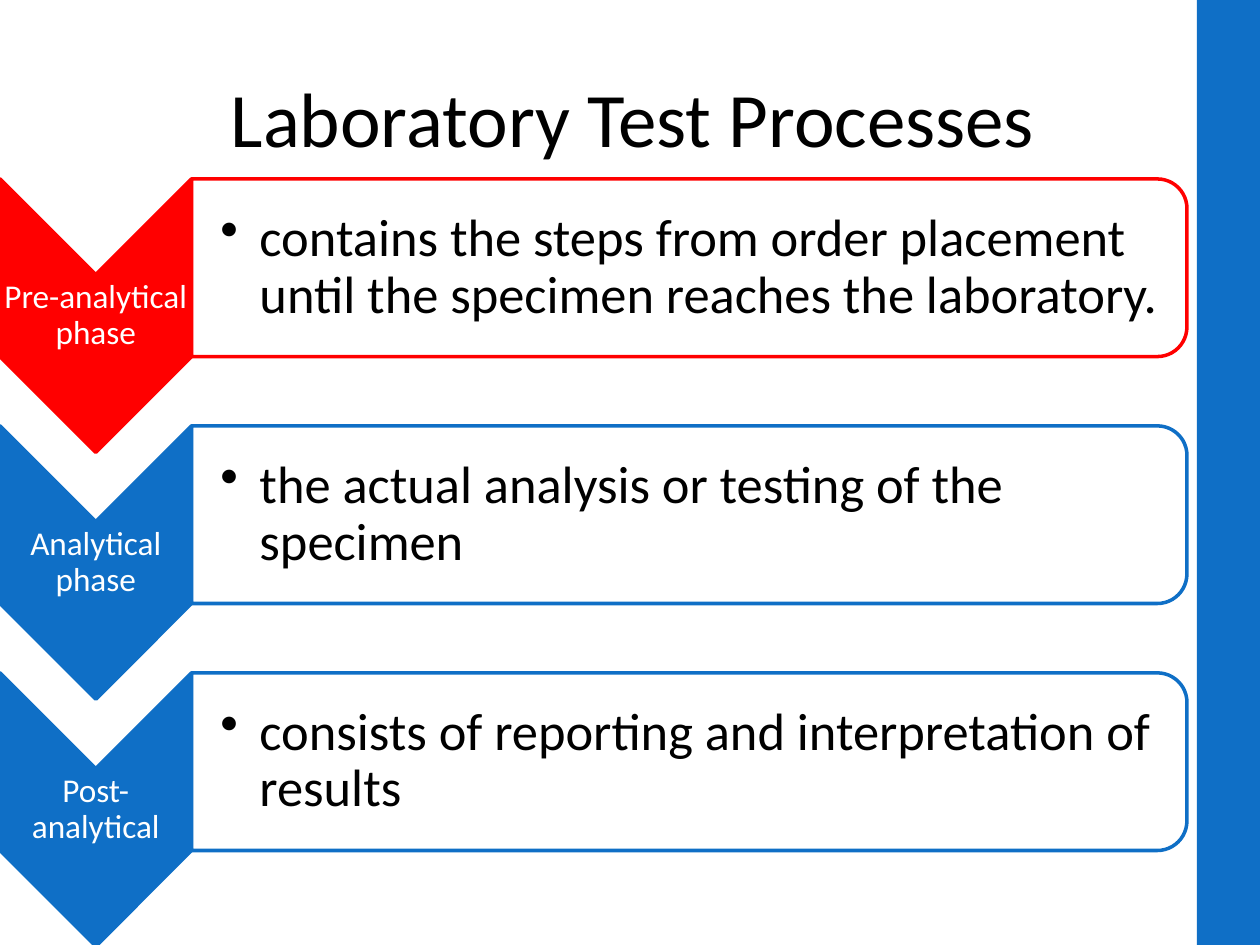
from lxml.etree import SubElement
from pptx import Presentation
from pptx.dml.color import RGBColor
from pptx.enum.shapes import MSO_SHAPE
from pptx.enum.text import MSO_ANCHOR, PP_ALIGN
from pptx.oxml.ns import qn
from pptx.util import Inches, Pt

WHITE = RGBColor(255, 255, 255)
BLACK = RGBColor(0, 0, 0)
RED = RGBColor(255, 0, 0)
BLUE = RGBColor(0x0F, 0x6F, 0xC6)

deck = Presentation()
deck.slide_width, deck.slide_height = Inches(10), Inches(7.5)
page = deck.slides.add_slide(deck.slide_layouts[6])

# Grid in inches: a phase column, a description column and three equal rows
PHASE_WIDTH, BODY_WIDTH = 1.52, 7.9
CHEVRON_HEIGHT, BODY_HEIGHT = 2.17, 1.41
FIRST_ROW, ROW_STEP = 1.42, 1.96


def add_turned(kind, left, top, width, height, color):
    """Add a shape turned by 90 degrees that covers the given area once turned."""
    shape = page.shapes.add_shape(
        kind, Inches(left + (width - height) / 2), Inches(top + (height - width) / 2),
        Inches(height), Inches(width))
    shape.rotation = 90
    shape.shadow.inherit = False
    shape.line.color.rgb = color
    shape.line.width = Pt(2)
    shape.fill.solid()
    return shape


def add_text(words, left, top, width, height, size, color, margins, spacing=1.0, bullet=False):
    box = page.shapes.add_textbox(Inches(left), Inches(top), Inches(width), Inches(height))
    frame = box.text_frame
    frame.word_wrap = True
    frame.vertical_anchor = MSO_ANCHOR.MIDDLE
    frame.margin_left = Inches(margins[0])
    frame.margin_top = frame.margin_right = frame.margin_bottom = Inches(margins[1])
    para = frame.paragraphs[0]
    para.line_spacing = spacing
    para.alignment = PP_ALIGN.LEFT if bullet else PP_ALIGN.CENTER
    if bullet:
        properties = para._p.get_or_add_pPr()
        properties.set("marL", str(Inches(0.31)))
        properties.set("indent", str(-Inches(0.31)))
        SubElement(properties, qn("a:buChar"), char="•")
    span = para.add_run()
    span.text = words
    span.font.name = "Calibri"
    span.font.size = Pt(size)
    span.font.color.rgb = color


side_band = page.shapes.add_shape(
    MSO_SHAPE.RECTANGLE, Inches(9.5), 0, Inches(0.5), deck.slide_height)
side_band.shadow.inherit = False
side_band.fill.solid()
side_band.fill.fore_color.rgb = BLUE
side_band.line.fill.background()

phases = [
    ("Pre-analytical phase", RED,
     "contains the steps from order placement until the specimen reaches the laboratory."),
    ("Analytical phase", BLUE, "the actual analysis or testing of the specimen"),
    ("Post-analytical", BLUE, "consists of reporting and interpretation of results"),
]
for row, (phase, color, description) in enumerate(phases):
    top = FIRST_ROW + row * ROW_STEP
    chevron = add_turned(MSO_SHAPE.CHEVRON, 0, top, PHASE_WIDTH, CHEVRON_HEIGHT, color)
    chevron.fill.fore_color.rgb = color
    add_text(phase, 0, top + PHASE_WIDTH / 2, PHASE_WIDTH, CHEVRON_HEIGHT - PHASE_WIDTH,
             19, WHITE, (0.01, 0.01), 0.9)

    panel = add_turned(MSO_SHAPE.ROUND_2_SAME_RECTANGLE, PHASE_WIDTH, top,
                       BODY_WIDTH, BODY_HEIGHT, color)
    panel.fill.fore_color.rgb = WHITE
    panel_color = panel.fill._xPr.find(qn("a:solidFill"))[0]
    SubElement(panel_color, qn("a:alpha"), val="90000")
    add_text(description, PHASE_WIDTH, top + 0.07, BODY_WIDTH - 0.07, BODY_HEIGHT - 0.14,
             30, BLACK, (0.23, 0.02), 0.9, bullet=True)

add_text("Laboratory Test Processes", 0.5, 0.3, 9, 1.25, 44, BLACK, (0.1, 0.05))

deck.save("out.pptx")
